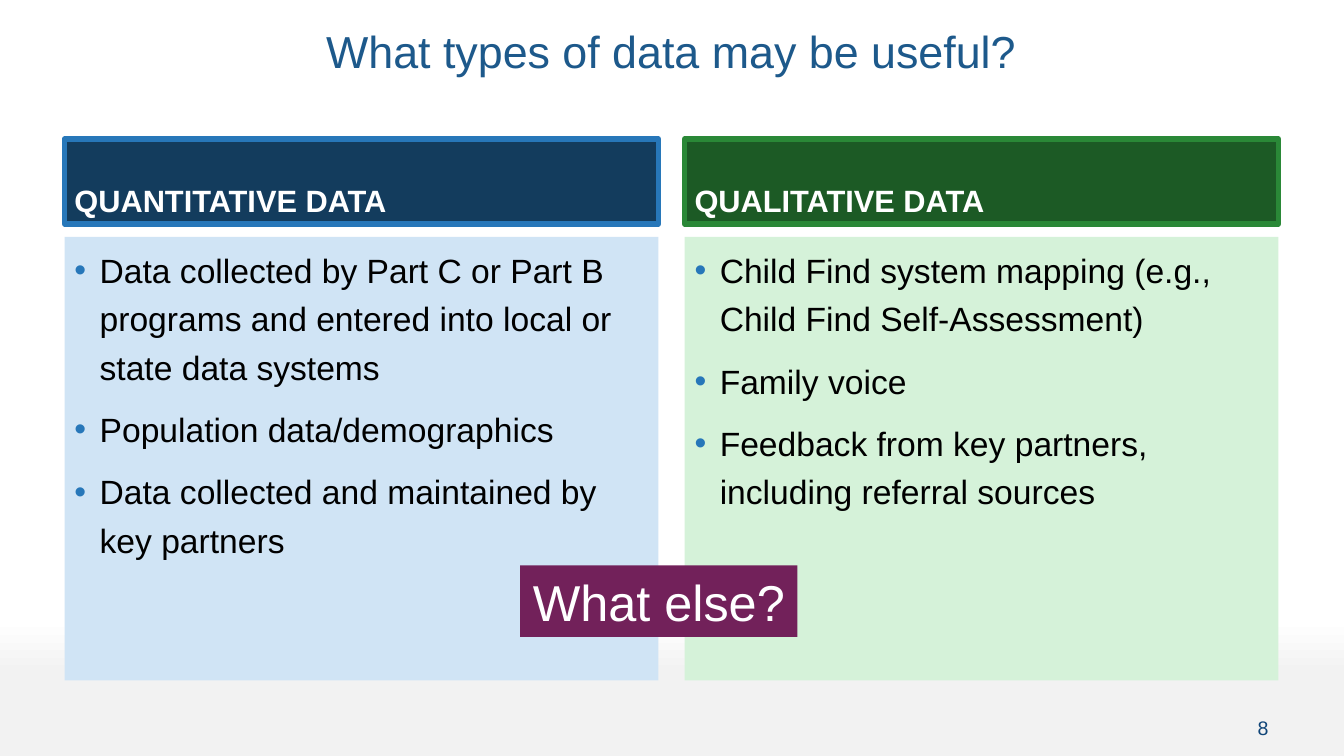
from dataclasses import dataclass

from lxml import etree
from pptx import Presentation
from pptx import util as u
from pptx.dml.color import RGBColor
from pptx.enum import shapes, text
from pptx.oxml import ns

ALIGN = text.PP_ALIGN
ANCHOR = text.MSO_ANCHOR


@dataclass(frozen=True)
class Theme:
    font: str = "Arial"
    title: str = "1D598B"
    number: str = "104578"
    white: str = "FFFFFF"
    gray: str = "F2F2F2"
    black: str = "000000"
    bullet: str = "2777B9"
    plum: str = "72215A"
    blue: tuple = ("133C5D", "2777B9", "D0E4F5")
    green: tuple = ("1C5A25", "2A8837", "D5F2D9")
    title_size: int = 32
    head_size: int = 22
    body_size: int = 24
    call_size: int = 36
    number_size: int = 14


class Canvas:
    def __init__(self, slide, theme):
        self.slide = slide
        self.theme = theme

    def place(self, shape, box):
        shape.left, shape.top, shape.width, shape.height = map(u.Inches, box)

    def label(self, para, words, size, color, bold=False, align=ALIGN.LEFT):
        para.alignment = align
        run = para.add_run()
        run.text = words
        font = run.font
        font.name, font.size, font.bold = self.theme.font, u.Pt(size), bold
        font.color.rgb = RGBColor.from_string(color)

    def backdrop(self):
        fill = self.slide.background.fill
        fill.gradient()
        fill.gradient_angle = 270
        colors = (self.theme.white, self.theme.gray)
        for stop, spot, color in zip(fill.gradient_stops, (0.82, 0.89), colors):
            stop.position = spot
            stop.color.rgb = RGBColor.from_string(color)

    def title(self, words, box):
        shape = self.slide.shapes.title
        self.place(shape, box)
        frame = shape.text_frame
        frame.auto_size = text.MSO_AUTO_SIZE.NONE
        frame.vertical_anchor = ANCHOR.TOP
        para = frame.paragraphs[0]
        para.line_spacing = 0.9
        self.label(para, words, self.theme.title_size, self.theme.title,
                   align=ALIGN.CENTER)

    def panel(self, box, fill, edge=None, anchor=ANCHOR.TOP):
        """Draw a filled rectangle and return its text frame."""
        shape = self.slide.shapes.add_shape(
            shapes.MSO_SHAPE.RECTANGLE, *map(u.Inches, box))
        shape.shadow.inherit = False
        shape.fill.solid()
        shape.fill.fore_color.rgb = RGBColor.from_string(fill)
        if edge:
            shape.line.color.rgb = RGBColor.from_string(edge)
            shape.line.width = u.Pt(4)
            line = shape.element.spPr.find(ns.qn("a:ln"))
            etree.SubElement(line, ns.qn("a:round"))
        else:
            shape.line.fill.background()
        frame = shape.text_frame
        frame.word_wrap = True
        frame.vertical_anchor = anchor
        return frame

    def header(self, words, box, fill, edge):
        frame = self.panel(box, fill, edge, ANCHOR.BOTTOM)
        self.label(frame.paragraphs[0], words, self.theme.head_size,
                   self.theme.white, bold=True)

    def mark(self, para):
        """Give a paragraph a hanging bullet."""
        props = para._p.get_or_add_pPr()
        props.set("marL", str(u.Inches(0.25)))
        props.set("indent", str(u.Inches(-0.25)))
        tint = etree.SubElement(props, ns.qn("a:buClr"))
        etree.SubElement(tint, ns.qn("a:srgbClr"), val=self.theme.bullet)
        etree.SubElement(props, ns.qn("a:buFont"), typeface=self.theme.font)
        etree.SubElement(props, ns.qn("a:buChar"), char="•")

    def bullets(self, items, box, fill):
        frame = self.panel(box, fill)
        for i, item in enumerate(items):
            para = frame.add_paragraph() if i else frame.paragraphs[0]
            self.mark(para)
            para.line_spacing = 1.2
            if i:
                para.space_before = u.Pt(10)
            self.label(para, item, self.theme.body_size, self.theme.black)

    def callout(self, words, box):
        frame = self.panel(box, self.theme.plum, anchor=ANCHOR.MIDDLE)
        frame.word_wrap = False
        self.label(frame.paragraphs[0], words, self.theme.call_size,
                   self.theme.white, align=ALIGN.CENTER)

    def number(self, words, box):
        shape = self.slide.shapes.add_textbox(*map(u.Inches, box))
        frame = shape.text_frame
        frame.word_wrap = True
        frame.vertical_anchor = ANCHOR.MIDDLE
        self.label(frame.paragraphs[0], words, self.theme.number_size,
                   self.theme.number, align=ALIGN.RIGHT)


def main():
    deck = Presentation()
    deck.slide_width, deck.slide_height = u.Inches(13.33), u.Inches(7.5)
    theme = Theme()
    page = Canvas(deck.slides.add_slide(deck.slide_layouts[5]), theme)
    page.backdrop()
    page.number("8", (11.33, 6.94, 1.35, 0.55))
    page.title("What types of data may be useful?", (0.64, 0.25, 12.04, 1))

    columns = [
        ("QUANTITATIVE DATA", theme.blue, [
            "Data collected by Part C or Part B programs and entered into "
            "local or state data systems",
            "Population data/demographics",
            "Data collected and maintained by key partners"]),
        ("QUALITATIVE DATA", theme.green, [
            "Child Find system mapping (e.g., Child Find Self-Assessment)",
            "Family voice",
            "Feedback from key partners, including referral sources"]),
    ]
    width, gap = 5.89, 0.26
    for i, (head, (dark, edge, pale), items) in enumerate(columns):
        left = 0.64 + i * (width + gap)
        page.header(head, (left, 1.38, width, 0.84), dark, edge)
        page.bullets(items, (left, 2.35, width, 4.4), pale)

    page.callout("What else?", (5.16, 5.61, 2.75, 0.71))
    deck.save("out.pptx")


if __name__ == "__main__":
    main()
